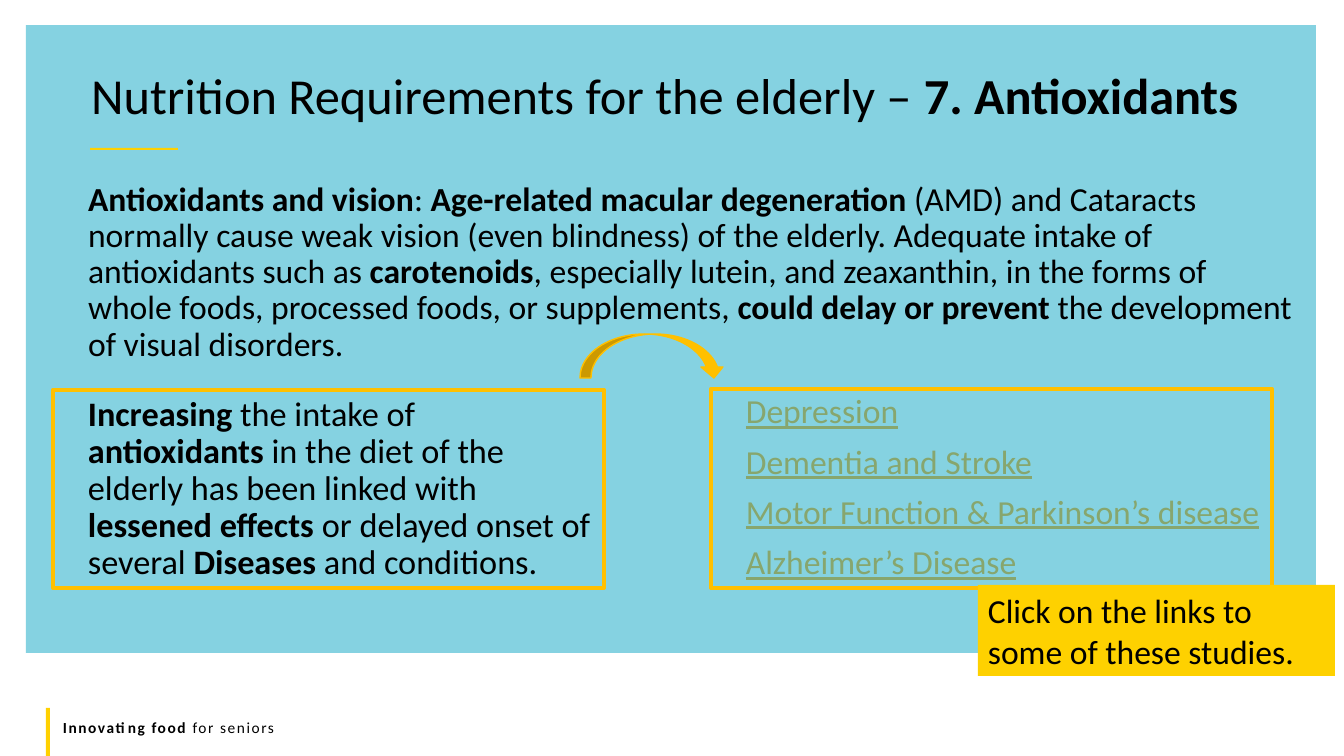
from lxml import etree
from pptx import Presentation
from pptx import util as u
from pptx.dml.color import RGBColor
from pptx.enum import shapes, text
from pptx.oxml.ns import qn

BLACK = RGBColor(0x00, 0x00, 0x00)
AQUA = RGBColor(0x85, 0xD2, 0xE1)
YELLOW = RGBColor(0xFF, 0xD1, 0x00)
CALLOUT_YELLOW = RGBColor(0xFE, 0xD1, 0x00)
AMBER = RGBColor(0xFF, 0xC0, 0x00)
LINK_GREEN = RGBColor(0x87, 0xA6, 0x6E)
FONT = "Calibri"

HEADING = [[("Nutrition Requirements for the elderly – ", False), ("7. Antioxidants", True)]]
VISION = [[
    ("Antioxidants and vision", True),
    (": ", False),
    ("Age-related macular degeneration ", True),
    ("(AMD) and Cataracts normally cause weak vision (even blindness) of the elderly. "
     "Adequate intake of antioxidants such as ", False),
    ("carotenoids", True),
    (", especially lutein, and zeaxanthin, in the forms of whole foods, processed foods, "
     "or supplements, ", False),
    ("could delay or prevent ", True),
    ("the development of visual disorders.", False),
]]
INTAKE = [[
    ("Increasing", True),
    (" the intake of ", False),
    ("antioxidants", True),
    (" in the diet of the elderly has been linked with ", False),
    ("lessened effects ", True),
    ("or delayed onset of several ", False),
    ("Diseases", True),
    (" and conditions.", False),
]]
DISEASES = [[(disease, False)] for disease in (
    "Depression",
    "Dementia and Stroke",
    "Motor Function & Parkinson’s disease",
    "Alzheimer’s Disease",
)]
PROMPT = [[("Click on the links to some of these studies.", False)]]
TAGLINE = [[("Innovating food ", True), ("for seniors", False)]]

PX = u.Inches(1) / 100.8


def px(*lengths):
    return [u.Emu(round(length * PX)) for length in lengths]


def write(holder, paragraphs, size, color=BLACK, indent=0, leading=1.0, gap=0,
          anchor=text.MSO_ANCHOR.TOP, underline=False, tracking=0):
    frame = holder.text_frame
    frame.word_wrap = True
    frame.auto_size = text.MSO_AUTO_SIZE.NONE
    frame.vertical_anchor = anchor
    for index, runs in enumerate(paragraphs):
        para = frame.add_paragraph() if index else frame.paragraphs[0]
        props = para._p.get_or_add_pPr()
        props.set("marL", str(px(indent)[0]))
        props.set("indent", "0")
        etree.SubElement(props, qn("a:buNone"))
        para.alignment = text.PP_ALIGN.LEFT
        para.line_spacing = leading
        para.space_before = u.Pt(gap if index else 0)
        para.space_after = u.Pt(0)
        for words, bold in runs:
            run = para.add_run()
            run.text = words
            run.font.name = FONT
            run.font.size = u.Pt(size)
            run.font.bold = bold
            run.font.color.rgb = color
            if underline:
                run.font.underline = True
            if tracking:
                run._r.get_or_add_rPr().set("spc", str(tracking))


def add_block(slide, box, fill=None, line=None, width=1, kind=shapes.MSO_SHAPE.RECTANGLE):
    block = slide.shapes.add_shape(kind, *px(*box))
    block.shadow.inherit = False
    if fill is None:
        block.fill.background()
    else:
        block.fill.solid()
        block.fill.fore_color.rgb = fill
    if line is None:
        block.line.fill.background()
    else:
        block.line.color.rgb = line
        block.line.width = u.Pt(width)
    return block


def place(slide, holder, box):
    holder.left, holder.top, holder.width, holder.height = px(*box)
    slide.shapes._spTree.append(holder._element)


def main():
    deck = Presentation()
    deck.slide_width, deck.slide_height = px(1344, 756)
    slide = deck.slides.add_slide(deck.slide_layouts[1])
    heading, vision = slide.placeholders

    add_block(slide, (26, 25, 1290, 628), AQUA)
    add_block(slide, (90, 148, 88, 2), YELLOW)
    add_block(slide, (46, 708, 4, 48), YELLOW)
    tagline = slide.shapes.add_textbox(*px(53, 713, 1210, 29))
    write(tagline, TAGLINE, 11, tracking=110)

    place(slide, vision, (53, 177, 1254, 476))
    write(vision, VISION, 24, indent=25, leading=0.9)
    place(slide, heading, (81, 71, 1191, 65))
    write(heading, HEADING, 36, leading=0.8)

    middle = text.MSO_ANCHOR.MIDDLE
    diseases = add_block(slide, (711, 389, 561, 199), line=AMBER, width=3)
    write(diseases, DISEASES, 24, LINK_GREEN, 25, 0.9, 10, middle, underline=True)
    intake = add_block(slide, (53, 390, 551, 198), line=AMBER, width=3)
    write(intake, INTAKE, 24.5, indent=25, leading=0.9, anchor=middle)

    add_block(slide, (580, 334, 145, 44), AMBER, AMBER,
              kind=shapes.MSO_SHAPE.CURVED_DOWN_ARROW)
    prompt = add_block(slide, (978, 585, 357, 91), CALLOUT_YELLOW)
    write(prompt, PROMPT, 24, anchor=middle)

    deck.save("out.pptx")


if __name__ == "__main__":
    main()
